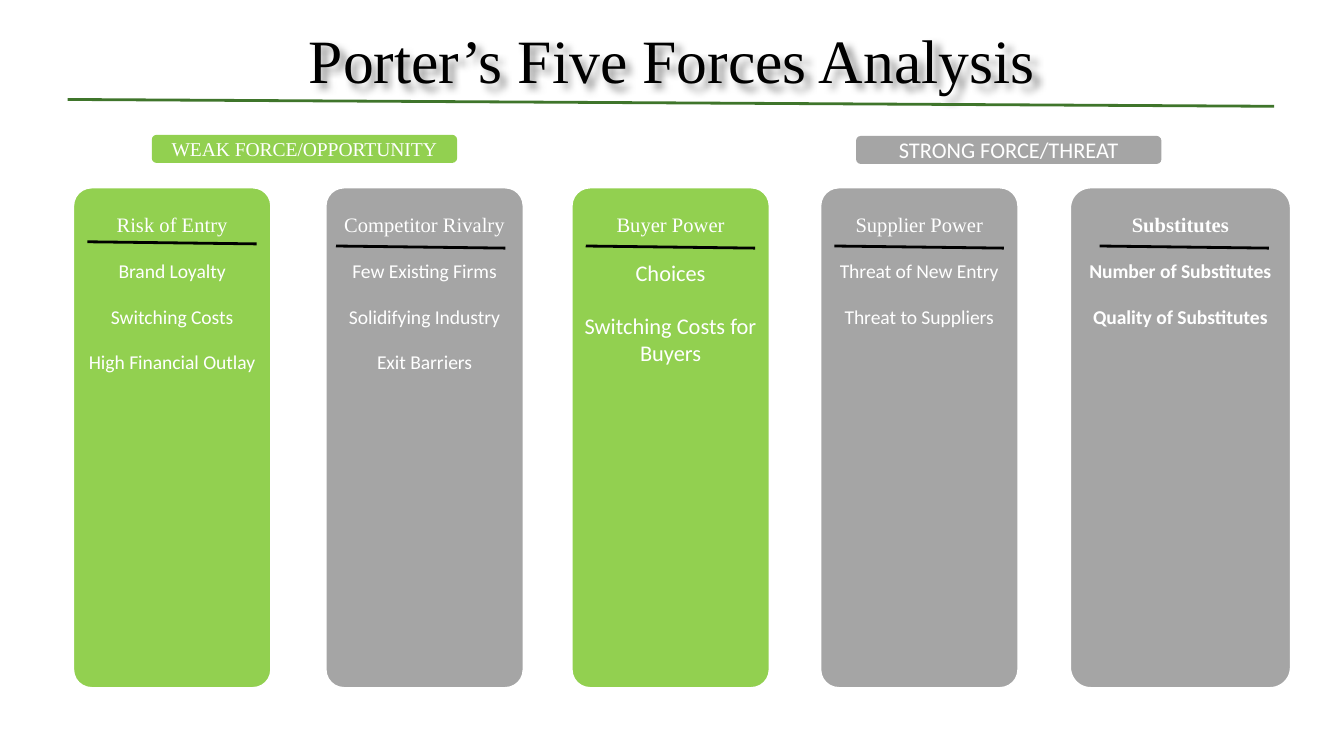
from dataclasses import dataclass

from lxml.etree import SubElement
from pptx import Presentation
from pptx.dml.color import RGBColor
from pptx.enum.shapes import MSO_CONNECTOR, MSO_SHAPE
from pptx.enum.text import MSO_ANCHOR, PP_ALIGN
from pptx.oxml.ns import qn
from pptx.slide import Slide
from pptx.util import Cm, Pt

GREEN = RGBColor(0x92, 0xD0, 0x50)
DARK_GREEN = RGBColor(0x3F, 0x75, 0x2B)
GRAY = RGBColor(0xA5, 0xA5, 0xA5)
WHITE = RGBColor(0xFF, 0xFF, 0xFF)
BLACK = RGBColor(0x00, 0x00, 0x00)

SERIF = "Times New Roman"
SANS = "Calibri"

COLUMN_TOP = 3.51
COLUMN_HEIGHT = 9.53
RULE_WIDTH = 3.2
RULE_DROP = 0.04


@dataclass
class Force:
    """One column; lengths in centimetres, text sizes in points."""
    name: str
    factors: list[str]
    color: RGBColor
    left: float
    rule_left: float
    rule_top: float = 4.65
    width: float = 3.81
    factor_size: float = 10.5
    factor_gap: float = 12
    bold: bool = False


@dataclass
class Badge:
    text: str
    color: RGBColor
    left: float
    top: float
    font_name: str
    font_size: float


FORCES = [
    Force("Risk of Entry", ["Brand Loyalty", "Switching Costs", "High Financial Outlay"],
          GREEN, 1.35, 1.65, rule_top=4.57),
    Force("Competitor Rivalry", ["Few Existing Firms", "Solidifying Industry", "Exit Barriers"],
          GRAY, 6.12, 6.35),
    Force("Buyer Power", ["Choices", "Switching Costs for Buyers"],
          GREEN, 10.77, 11.07, factor_size=12, factor_gap=14.5),
    Force("Supplier Power", ["Threat of New Entry", "Threat to Suppliers"],
          GRAY, 15.47, 15.77),
    Force("Substitutes", ["Number of Substitutes", "Quality of Substitutes"],
          GRAY, 20.19, 20.78, width=4.24, bold=True),
]

BADGES = [
    Badge("WEAK FORCE/OPPORTUNITY", GREEN, 2.87, 2.55, SERIF, 10.5),
    Badge("STRONG FORCE/THREAT", GRAY, 16.18, 2.57, SANS, 12),
]


def style_paragraph(paragraph, text: str, font_name: str, size: float,
                    color: RGBColor = WHITE, bold: bool = False) -> None:
    paragraph.text = text
    paragraph.alignment = PP_ALIGN.CENTER
    font = paragraph.font
    font.name = font_name
    font.size = Pt(size)
    font.bold = bold
    font.color.rgb = color


def set_margins(text_frame, horizontal: float, vertical: float) -> None:
    text_frame.margin_left = text_frame.margin_right = Cm(horizontal)
    text_frame.margin_top = text_frame.margin_bottom = Cm(vertical)


def add_rule(slide: Slide, left: float, top: float, width: float, drop: float,
             color: RGBColor) -> None:
    """Draw a line that sinks by drop from left to right."""
    rule = slide.shapes.add_connector(
        MSO_CONNECTOR.STRAIGHT, Cm(left), Cm(top), Cm(left + width), Cm(top + drop))
    rule.line.color.rgb = color
    rule.line.width = Pt(1.5)
    SubElement(rule._element.spPr, qn("a:effectLst"))


def add_title(slide: Slide, text: str) -> None:
    title = slide.shapes.add_textbox(Cm(0), Cm(0.56), Cm(25.4), Cm(1.3))
    text_frame = title.text_frame
    text_frame.word_wrap = True
    text_frame.vertical_anchor = MSO_ANCHOR.MIDDLE
    set_margins(text_frame, 0.18, 0.1)
    paragraph = text_frame.paragraphs[0]
    style_paragraph(paragraph, text, SERIF, 33, BLACK)
    paragraph.line_spacing = 0.9

    effects = SubElement(title._element.spPr, qn("a:effectLst"))
    shadow = SubElement(effects, qn("a:outerShdw"), blurRad="50800", dist="38100",
                        dir="2700000", algn="tl", rotWithShape="0")
    shadow_color = SubElement(shadow, qn("a:srgbClr"), val=str(BLACK))
    SubElement(shadow_color, qn("a:alpha"), val="40000")


def add_force(slide: Slide, force: Force) -> None:
    column = slide.shapes.add_shape(
        MSO_SHAPE.ROUNDED_RECTANGLE, Cm(force.left), Cm(COLUMN_TOP),
        Cm(force.width), Cm(COLUMN_HEIGHT))
    column.adjustments[0] = 0.1
    column.shadow.inherit = False
    column.fill.solid()
    column.fill.fore_color.rgb = force.color
    column.line.color.rgb = WHITE
    column.line.width = Pt(3)

    text_frame = column.text_frame
    text_frame.word_wrap = True
    text_frame.vertical_anchor = MSO_ANCHOR.TOP
    set_margins(text_frame, 0.1, 0.38)
    style_paragraph(text_frame.paragraphs[0], force.name, SERIF, 11, bold=force.bold)
    for index, factor in enumerate(force.factors):
        paragraph = text_frame.add_paragraph()
        style_paragraph(paragraph, factor, SANS, force.factor_size, bold=force.bold)
        paragraph.space_before = Pt(force.factor_gap if index else 12)

    add_rule(slide, force.rule_left, force.rule_top, RULE_WIDTH, RULE_DROP, BLACK)


def add_badge(slide: Slide, badge: Badge) -> None:
    shape = slide.shapes.add_shape(
        MSO_SHAPE.FLOWCHART_ALTERNATE_PROCESS, Cm(badge.left), Cm(badge.top),
        Cm(5.77), Cm(0.53))
    shape.shadow.inherit = False
    shape.fill.solid()
    shape.fill.fore_color.rgb = badge.color
    shape.line.fill.background()
    text_frame = shape.text_frame
    text_frame.word_wrap = True
    text_frame.vertical_anchor = MSO_ANCHOR.MIDDLE
    style_paragraph(text_frame.paragraphs[0], badge.text, badge.font_name, badge.font_size)


def main() -> None:
    presentation = Presentation()
    presentation.slide_width = Cm(25.4)
    presentation.slide_height = Cm(14.29)
    slide = presentation.slides.add_slide(presentation.slide_layouts[6])

    add_title(slide, "Porter’s Five Forces Analysis")
    add_rule(slide, 1.28, 1.88, 22.8, 0.13, DARK_GREEN)
    for badge in BADGES:
        add_badge(slide, badge)
    for force in FORCES:
        add_force(slide, force)

    presentation.save("out.pptx")


if __name__ == "__main__":
    main()
